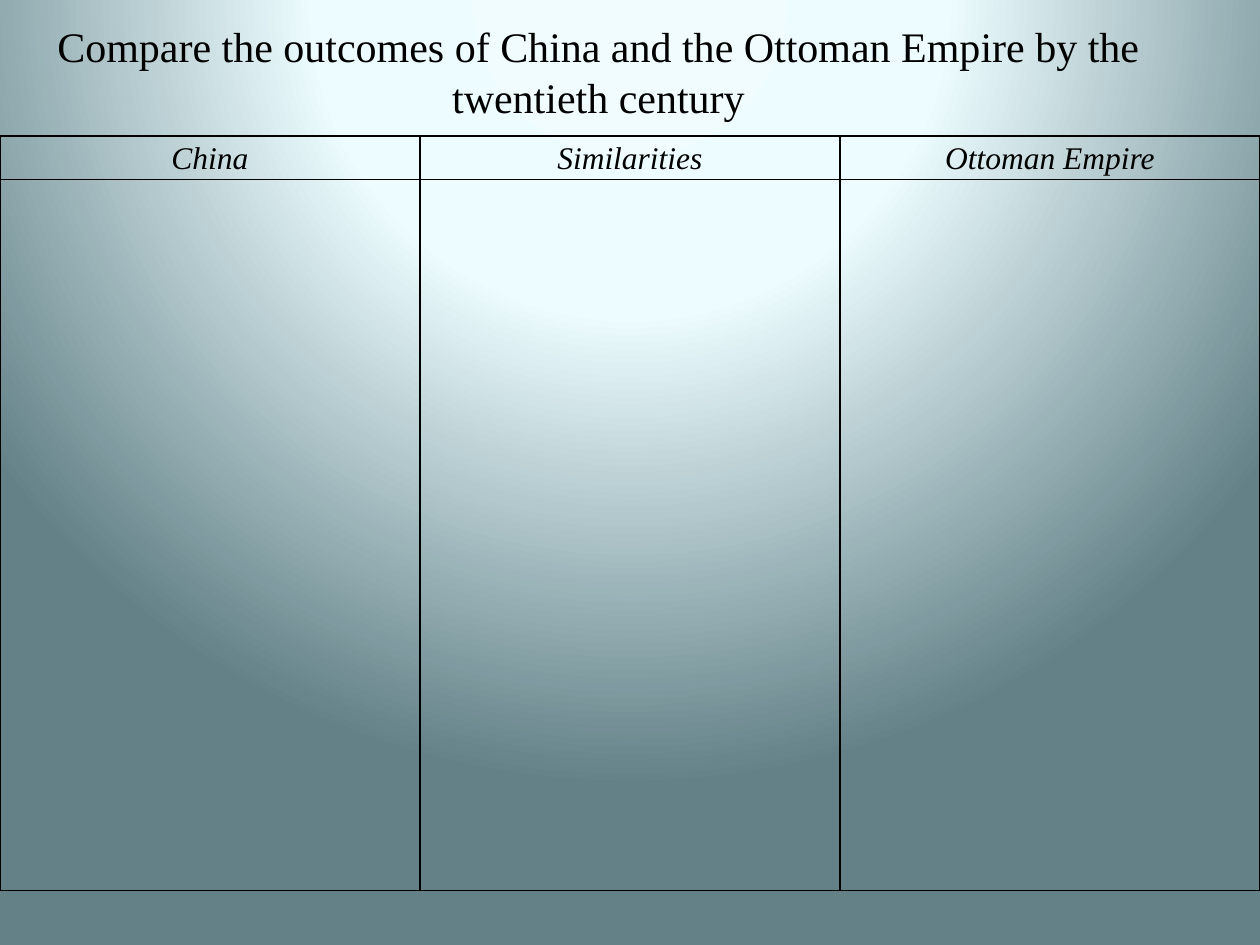
from dataclasses import dataclass

from lxml import etree
from pptx import Presentation
from pptx.dml.color import RGBColor
from pptx.enum.text import MSO_ANCHOR, PP_ALIGN
from pptx.oxml import parse_xml
from pptx.oxml.ns import nsdecls, qn
from pptx.util import Cm, Pt

CENTER = PP_ALIGN.CENTER
MIDDLE = MSO_ANCHOR.MIDDLE
BLANK_LAYOUT = 6
BORDER_SIDES = ("a:lnL", "a:lnR", "a:lnT", "a:lnB")


@dataclass(frozen=True)
class Theme:
    font: str = "Times New Roman"
    ink: str = "000000"
    title_size: int = 24
    heading_size: int = 18
    heading_spacing: float = 1.15
    border_width: int = 1
    glow: tuple = ((0, "F1FCFF"), (40, "ECFCFF"), (100, "638187"))


class ComparisonSlide:
    def __init__(self, slide, theme):
        self.slide = slide
        self.theme = theme

    def background(self):
        stops = "".join(
            f'<a:gs pos="{percent * 1000}"><a:srgbClr val="{color}"/></a:gs>'
            for percent, color in self.theme.glow
        )
        glow = parse_xml(
            f'<p:bg {nsdecls("p", "a")}><p:bgPr><a:gradFill rotWithShape="1">'
            f'<a:gsLst>{stops}</a:gsLst><a:path path="circle">'
            '<a:fillToRect l="50000" t="-80000" r="50000" b="180000"/></a:path>'
            "</a:gradFill><a:effectLst/></p:bgPr></p:bg>"
        )
        self.slide.element.cSld.insert(0, glow)

    def add_centered_text(self, frame, text, size, italic=False):
        paragraph = frame.paragraphs[0]
        paragraph.alignment = CENTER
        run = paragraph.add_run()
        run.text = text
        run.font.name = self.theme.font
        run.font.size = Pt(size)
        run.font.italic = italic
        run.font.color.rgb = RGBColor.from_string(self.theme.ink)
        return paragraph

    def title(self, text, left, top, width, height):
        frame = self.slide.shapes.add_textbox(left, top, width, height).text_frame
        frame.word_wrap = True
        frame.vertical_anchor = MIDDLE
        self.add_centered_text(frame, text, self.theme.title_size)

    def style_cell(self, cell):
        cell.margin_left = cell.margin_right = Cm(0.15)
        cell.margin_top = cell.margin_bottom = 0
        cell.fill.background()
        properties = cell._tc.get_or_add_tcPr()
        for position, side in enumerate(BORDER_SIDES):
            border = etree.Element(qn(side), w=str(Pt(self.theme.border_width)))
            fill = etree.SubElement(border, qn("a:solidFill"))
            etree.SubElement(fill, qn("a:srgbClr"), val=self.theme.ink)
            properties.insert(position, border)

    def comparison_table(self, headings, left, top, width, row_heights):
        table = self.slide.shapes.add_table(
            len(row_heights), len(headings), left, top, width, sum(row_heights)
        ).table
        table.first_row = table.horz_banding = False
        for row, height in zip(table.rows, row_heights):
            row.height = height
        for cell in table.iter_cells():
            self.style_cell(cell)
        for column, heading in enumerate(headings):
            paragraph = self.add_centered_text(
                table.cell(0, column).text_frame,
                heading,
                self.theme.heading_size,
                italic=True,
            )
            paragraph.line_spacing = self.theme.heading_spacing


def main():
    deck = Presentation()
    deck.slide_width, deck.slide_height = Cm(25.4), Cm(19.05)
    page = ComparisonSlide(
        deck.slides.add_slide(deck.slide_layouts[BLANK_LAYOUT]), Theme()
    )

    # Backdrop and question
    page.background()
    page.title(
        "Compare the outcomes of China and the Ottoman Empire by the twentieth century",
        Cm(0), Cm(0.76), Cm(24.13), Cm(1.35),
    )

    # Headings above empty columns for the answers
    page.comparison_table(
        ("China", "Similarities", "Ottoman Empire"),
        Cm(0), Cm(2.74), deck.slide_width, (Cm(0.69), Cm(14.33)),
    )

    deck.save("out.pptx")


if __name__ == "__main__":
    main()
